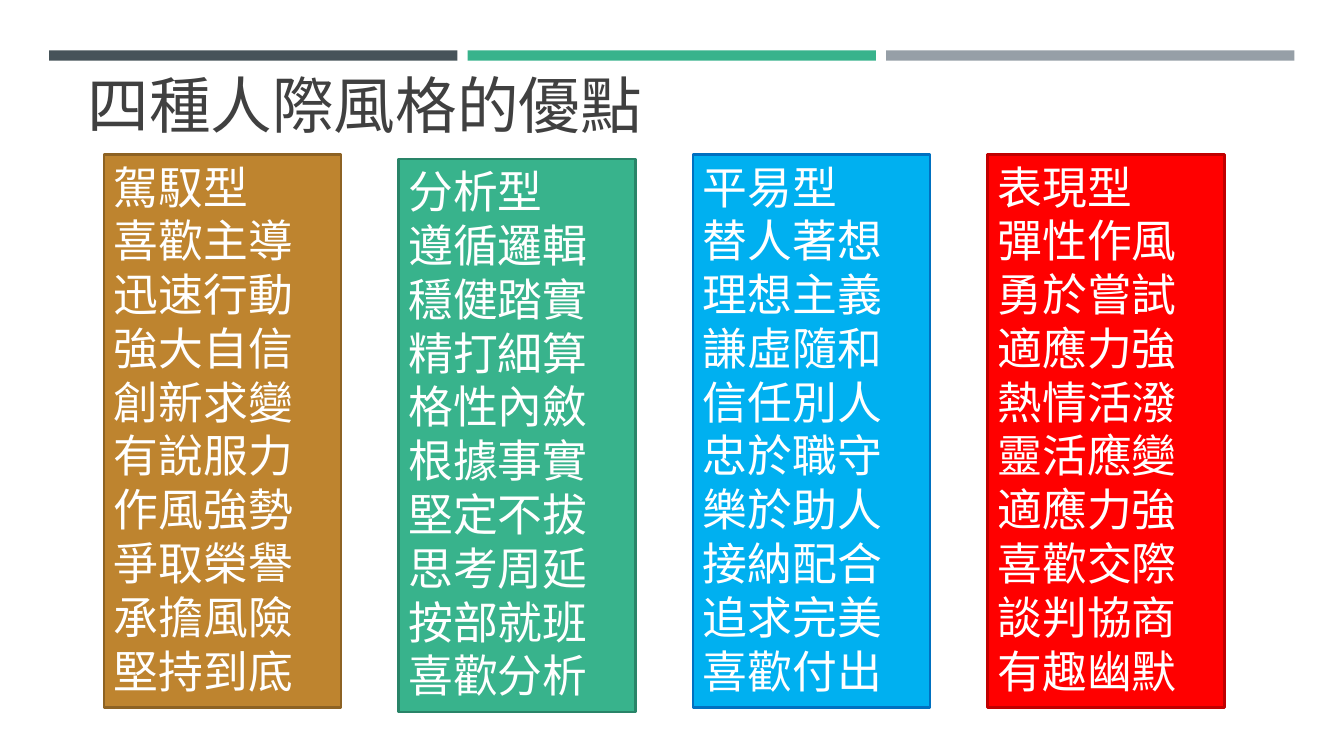
from pptx import Presentation
from pptx.dml.color import RGBColor
from pptx.enum.shapes import MSO_SHAPE
from pptx.enum.text import MSO_ANCHOR, MSO_AUTO_SIZE, PP_ALIGN
from pptx.util import Cm, Pt

RECT = MSO_SHAPE.RECTANGLE
TOP, BOTTOM = MSO_ANCHOR.TOP, MSO_ANCHOR.BOTTOM
LEFT = PP_ALIGN.LEFT
GROW = MSO_AUTO_SIZE.SHAPE_TO_FIT_TEXT

WHITE = RGBColor(0xFF, 0xFF, 0xFF)
CHARCOAL = RGBColor(0x40, 0x40, 0x40)
SLATE = RGBColor(0x46, 0x53, 0x59)
GRAY = RGBColor(0x96, 0x9F, 0xA7)
GREEN = RGBColor(0x38, 0xB3, 0x8C)
DARK_GREEN = RGBColor(0x29, 0x84, 0x68)
OCHRE = RGBColor(0xBE, 0x84, 0x2F)
BROWN = RGBColor(0x8D, 0x62, 0x23)
SKY = RGBColor(0x00, 0xB0, 0xF0)
BLUE = RGBColor(0x00, 0x70, 0xC0)
RED = RGBColor(0xFF, 0x00, 0x00)
DARK_RED = RGBColor(0xC0, 0x00, 0x00)

# Fill, outline, downward offset in cm, lines
STYLES = [
    (OCHRE, BROWN, 0,
     ["駕馭型", "喜歡主導", "迅速行動", "強大自信", "創新求變",
      "有說服力", "作風強勢", "爭取榮譽", "承擔風險", "堅持到底"]),
    (GREEN, DARK_GREEN, 0.12,
     ["分析型", "遵循邏輯", "穩健踏實", "精打細算", "格性內斂",
      "根據事實", "堅定不拔", "思考周延", "按部就班", "喜歡分析"]),
    (SKY, BLUE, 0,
     ["平易型", "替人著想", "理想主義", "謙虛隨和", "信任別人",
      "忠於職守", "樂於助人", "接納配合", "追求完美", "喜歡付出"]),
    (RED, DARK_RED, 0,
     ["表現型", "彈性作風", "勇於嘗試", "適應力強", "熱情活潑",
      "靈活應變", "適應力強", "喜歡交際", "談判協商", "有趣幽默"]),
]


def add_rect(slide, x, y, w, h, fill):
    sp = slide.shapes.add_shape(RECT, x, y, w, h)
    sp.shadow.inherit = False
    sp.fill.solid()
    sp.fill.fore_color.rgb = fill
    sp.line.fill.background()
    return sp


def add_run(p, text, size, font, color):
    p.alignment = LEFT
    r = p.add_run()
    r.text = text
    r.font.size = Pt(size)
    r.font.name = font
    r.font.color.rgb = color


def add_top_bars(slide, x, y, w, h):
    gap = Cm(0.26)
    colors = [SLATE, GREEN, GRAY]
    bar_w = (w - gap * (len(colors) - 1)) // len(colors)
    for i, color in enumerate(colors):
        add_rect(slide, x + i * (bar_w + gap), y, bar_w, h, color)


def add_title(slide, x, y, w, h):
    tf = slide.shapes.add_textbox(x, y, w, h).text_frame
    tf.word_wrap = True
    tf.vertical_anchor = BOTTOM
    p = tf.paragraphs[0]
    p.line_spacing = 0.9
    add_run(p, "四種人際風格的優點", 44, "Roboto Condensed", CHARCOAL)


def add_style_columns(slide, x, y, w, h):
    col_w = Cm(5.97)
    pitch = (w - col_w) // (len(STYLES) - 1)
    for i, (fill, outline, drop, lines) in enumerate(STYLES):
        sp = add_rect(slide, x + i * pitch, y + Cm(drop), col_w, h, fill)
        sp.line.color.rgb = outline
        sp.line.width = Pt(1.75)
        tf = sp.text_frame
        tf.word_wrap = True
        tf.auto_size = GROW
        tf.vertical_anchor = TOP
        for j, line in enumerate(lines):
            p = tf.add_paragraph() if j else tf.paragraphs[0]
            add_run(p, line, 32, "Arial", WHITE)


def main():
    prs = Presentation()
    prs.slide_width, prs.slide_height = Cm(33.87), Cm(19.05)
    slide = prs.slides.add_slide(prs.slide_layouts[6])
    add_top_bars(slide, Cm(1.24), Cm(1.27), Cm(31.38), Cm(0.26))
    add_style_columns(slide, Cm(2.62), Cm(3.89), Cm(28.24), Cm(13.94))
    add_title(slide, Cm(1.96), Cm(1.63), Cm(30.63), Cm(2.08))
    prs.save("out.pptx")


if __name__ == "__main__":
    main()
